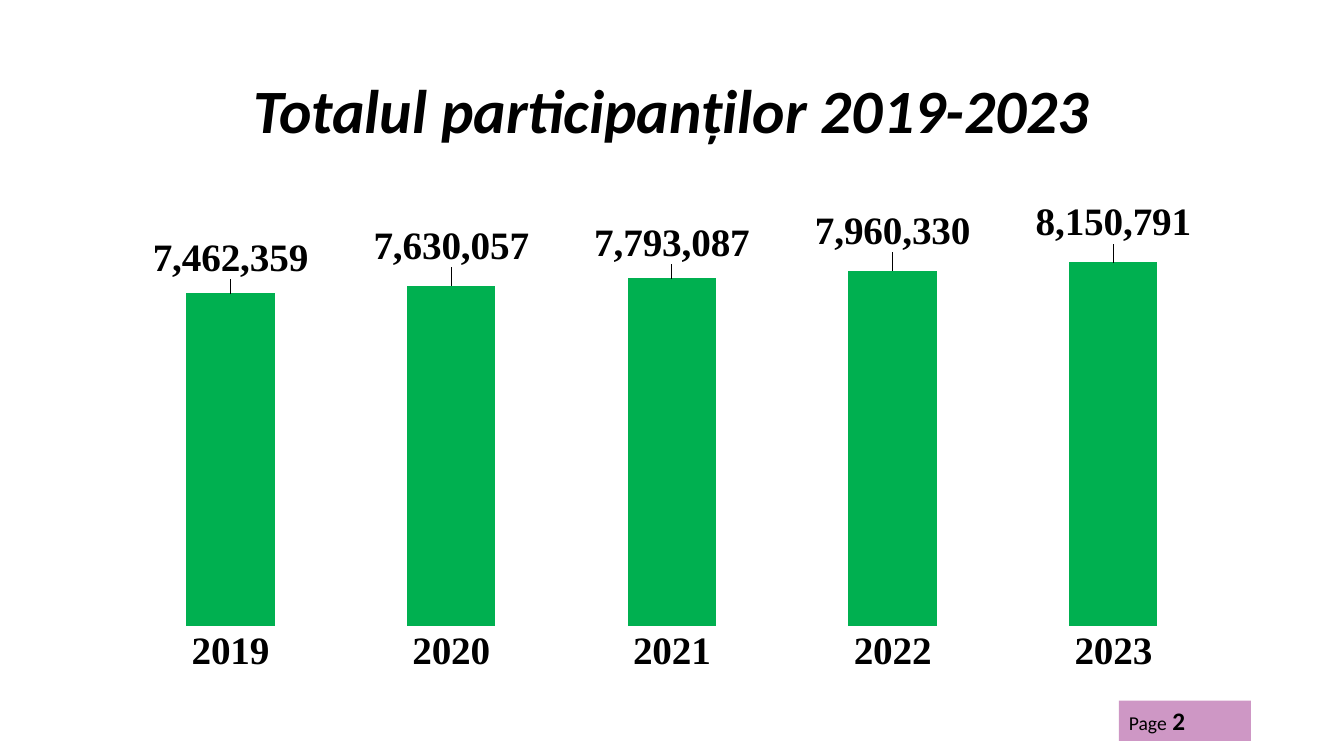
from lxml.etree import SubElement
from pptx import Presentation
from pptx.chart.data import CategoryChartData
from pptx.dml.color import RGBColor
from pptx.enum.chart import XL_CHART_TYPE, XL_LABEL_POSITION, XL_TICK_MARK
from pptx.enum.shapes import MSO_SHAPE
from pptx.enum.text import MSO_ANCHOR, PP_ALIGN
from pptx.oxml import parse_xml
from pptx.oxml.ns import nsdecls, qn
from pptx.util import Pt

PARTICIPANTS = {
    "2019": 7462359,
    "2020": 7630057,
    "2021": 7793087,
    "2022": 7960330,
    "2023": 8150791,
}
# Upward shift of each value label, as a share of the chart height
LABEL_SHIFTS = [-0.02, -0.03, -0.02, -0.03, -0.03]


def color(value):
    return RGBColor.from_string(value)


def style_font(font, size, name="Calibri", bold=False, italic=False):
    font.name = name
    font.size = Pt(size)
    font.bold = bold
    font.italic = italic
    font.color.rgb = color("000000")


def add_run(p, text, size, **style):
    r = p.add_run()
    r.text = text
    style_font(r.font, size, **style)


def place(sp, left, top, width, height):
    sp.left, sp.top, sp.width, sp.height = map(Pt, (left, top, width, height))


def manual_layout(**values):
    items = "".join(f'<c:{key} val="{val}"/>' for key, val in values.items())
    return parse_xml(f"<c:layout {nsdecls('c')}><c:manualLayout>{items}"
                     "</c:manualLayout></c:layout>")


def add_title(s, text):
    sp = s.shapes.title
    place(sp, 66, 47.5, 828, 67.7)
    tf = sp.text_frame
    tf.vertical_anchor = MSO_ANCHOR.MIDDLE
    p = tf.paragraphs[0]
    p.alignment = PP_ALIGN.CENTER
    p.line_spacing = 0.9
    add_run(p, text, 44, bold=True, italic=True)


def add_page_tag(s, number):
    sp = s.shapes.add_shape(MSO_SHAPE.RECTANGLE, Pt(799.2), Pt(500.4), Pt(94.3), Pt(28.8))
    sp.shadow.inherit = False
    sp.line.fill.background()
    sp.fill.solid()
    sp.fill.fore_color.rgb = color("9F318D")
    # Half-transparent fill
    rgb = sp.fill._xPr.find(qn("a:solidFill")).find(qn("a:srgbClr"))
    SubElement(rgb, qn("a:alpha"), val="50000")
    tf = sp.text_frame
    tf.vertical_anchor = MSO_ANCHOR.MIDDLE
    p = tf.paragraphs[0]
    p.alignment = PP_ALIGN.LEFT
    add_run(p, "Page", 14)
    add_run(p, f" {number}", 18, bold=True)


def add_column_chart(s, values):
    data = CategoryChartData(number_format="#,##0")
    data.categories = list(values)
    data.add_series("Series 1", list(values.values()))
    chart = s.shapes.add_chart(XL_CHART_TYPE.COLUMN_CLUSTERED, Pt(66), Pt(144),
                               Pt(828), Pt(342.7), data).chart
    chart.has_legend = False
    chart.has_title = False
    style_font(chart.font, 10)

    # Axes
    axis = chart.category_axis
    axis.major_tick_mark = XL_TICK_MARK.NONE
    axis.format.line.fill.background()
    style_font(axis.tick_labels.font, 28, "Times New Roman", bold=True)
    axis = chart.value_axis
    axis.minimum_scale = 0
    axis.maximum_scale = 9270000
    axis.has_major_gridlines = False
    axis.visible = False

    # Columns
    plot = chart.plots[0]
    plot.gap_width = 150
    plot.vary_by_categories = False
    series = plot.series[0]
    series.format.fill.solid()
    series.format.fill.fore_color.rgb = color("00B050")

    # Value labels
    labels = series.data_labels
    labels.show_value = True
    labels.number_format = "#,##0"
    labels.number_format_is_linked = False
    labels.position = XL_LABEL_POSITION.OUTSIDE_END
    style_font(labels.font, 28, "Times New Roman", bold=True)
    for i in range(len(values)):
        label = series.points[i].data_label
        label.position = XL_LABEL_POSITION.OUTSIDE_END
        style_font(label.font, 28, "Times New Roman", bold=True)
    for idx, shift in zip(series._element.findall(".//" + qn("c:dLbl") + "/" + qn("c:idx")),
                          LABEL_SHIFTS):
        idx.addnext(manual_layout(x=0, y=shift))

    # Plot area position
    area = chart._chartSpace.find(".//" + qn("c:plotArea"))
    old = area.find(qn("c:layout"))
    if old is not None:
        area.remove(old)
    area.insert(0, manual_layout(layoutTarget="inner", xMode="edge", yMode="edge",
                                 x=0.024, y=0.013, w=0.952, h=0.871))


def main():
    prs = Presentation()
    prs.slide_width, prs.slide_height = Pt(960), Pt(540)
    s = prs.slides.add_slide(prs.slide_layouts[5])
    add_title(s, "Totalul participanților 2019-2023")
    add_page_tag(s, 2)
    add_column_chart(s, PARTICIPANTS)
    prs.save("out.pptx")


if __name__ == "__main__":
    main()
